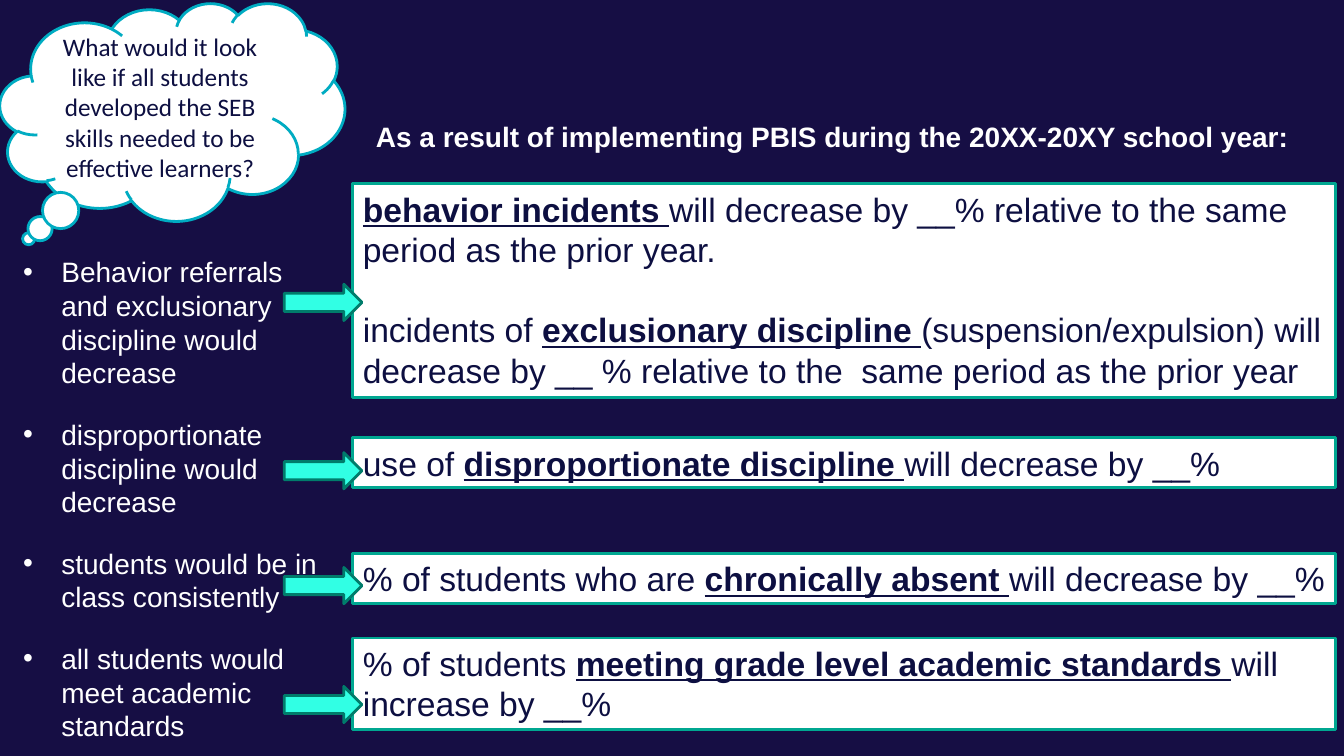
from lxml import etree
from pptx import Presentation
from pptx.dml.color import RGBColor
from pptx.enum.shapes import MSO_SHAPE
from pptx.enum.text import MSO_ANCHOR, PP_ALIGN
from pptx.oxml.ns import qn
from pptx.util import Inches, Pt

CLOUD, RECT, ARROW = MSO_SHAPE.CLOUD_CALLOUT, MSO_SHAPE.RECTANGLE, MSO_SHAPE.RIGHT_ARROW
TOP, MIDDLE = MSO_ANCHOR.TOP, MSO_ANCHOR.MIDDLE
LEFT, CENTER = PP_ALIGN.LEFT, PP_ALIGN.CENTER

NAVY = RGBColor(0x16, 0x0E, 0x44)
INK = RGBColor(0x0D, 0x0F, 0x41)
WHITE = RGBColor(0xFF, 0xFF, 0xFF)
CYAN = RGBColor(0x00, 0xAC, 0xC2)
TEAL = RGBColor(0x00, 0xA7, 0x91)
MINT = RGBColor(0x31, 0xFF, 0xE4)
GREEN = RGBColor(0x00, 0x7C, 0x6B)

# Content
QUESTION = ("What would it look like if all students developed the SEB "
            "skills needed to be effective learners?")
HEADING = "As a result of implementing PBIS during the 20XX-20XY school year:"
OUTCOMES = [
    "Behavior referrals and exclusionary discipline would decrease",
    "disproportionate discipline would decrease",
    "students would be in class consistently",
    "all students would meet academic standards",
]
# Goals: box top, box height, arrow top, paragraphs of (before, key, after)
GOALS = [
    (1.82, 2.12, 2.82, [
        ("", "behavior incidents ",
         "will decrease by __% relative to the same period as the prior year."),
        ("incidents of ", "exclusionary discipline ",
         "(suspension/expulsion) will decrease by __ % relative to the  same "
         "period as the prior year"),
    ]),
    (4.34, 0.5, 4.49, [
        ("use of ", "disproportionate discipline ", "will decrease by __%")]),
    (5.49, 0.5, 5.63, [
        ("% of students who are ", "chronically absent ", "will decrease by __%")]),
    (6.33, 0.91, 6.81, [
        ("% of students ", "meeting grade level academic standards ",
         "will increase by __%")]),
]
GOAL_X, GOAL_W = 3.5, 9.75
ARROW_X, ARROW_W, ARROW_H = 2.82, 0.77, 0.36


def add_box(kind, x, y, w, h, fill, line):
    box = slide.shapes.add_shape(kind, Inches(x), Inches(y), Inches(w), Inches(h))
    box.shadow.inherit = False
    box.fill.solid()
    box.fill.fore_color.rgb = fill
    box.line.color.rgb = line
    box.line.width = Pt(2)
    return box


def add_label(x, y, w, h):
    frame = slide.shapes.add_textbox(
        Inches(x), Inches(y), Inches(w), Inches(h)).text_frame
    frame.word_wrap = True
    return frame


def style(run, size, color, bold=False, face="Arial"):
    run.font.name = face
    run.font.size = Pt(size)
    run.font.bold = bold
    run.font.color.rgb = color


prs = Presentation()
prs.slide_width, prs.slide_height = Inches(13.33), Inches(7.5)
slide = prs.slides.add_slide(prs.slide_layouts[6])
slide.background.fill.solid()
slide.background.fill.fore_color.rgb = NAVY

# Thought cloud
cloud = add_box(CLOUD, 0, 0.03, 3.42, 2.16, WHITE, CYAN)
cloud.adjustments[0], cloud.adjustments[1] = -0.417, 0.583
frame = cloud.text_frame
frame.text = QUESTION
frame.vertical_anchor = MIDDLE
frame.paragraphs[0].alignment = CENTER
style(frame.paragraphs[0].runs[0], 18, INK, face="Calibri")

# Bulleted outcomes
frame = add_label(0.13, 2.48, 3.29, 4.98)
frame.text = "\n".join(OUTCOMES)
for para in frame.paragraphs:
    para.space_after = Pt(20)
    props = para._p.get_or_add_pPr()
    props.set("marL", str(Inches(0.38)))
    props.set("indent", str(-Inches(0.38)))
    etree.SubElement(props, qn("a:buFont")).set("typeface", "Arial")
    etree.SubElement(props, qn("a:buChar")).set("char", "•")
    style(para.runs[0], 20, WHITE)

# Heading
frame = add_label(3.63, 1.14, 9.5, 0.44)
frame.text = HEADING
style(frame.paragraphs[0].runs[0], 20, WHITE, bold=True)

# Goal boxes
for top, height, _, lines in GOALS:
    frame = add_box(RECT, GOAL_X, top, GOAL_W, height, WHITE, TEAL).text_frame
    frame.word_wrap = True
    frame.vertical_anchor = TOP
    for i, parts in enumerate(lines):
        para = frame.add_paragraph() if i else frame.paragraphs[0]
        para.alignment = LEFT
        if i:
            para.space_before = Pt(28.8)
        for j, words in enumerate(parts):
            if words:
                run = para.add_run()
                run.text = words
                style(run, 24, INK, bold=j == 1)
                run.font.underline = j == 1

# Arrows
for _, _, top, _ in GOALS:
    add_box(ARROW, ARROW_X, top, ARROW_W, ARROW_H, MINT, GREEN)

prs.save("out.pptx")
